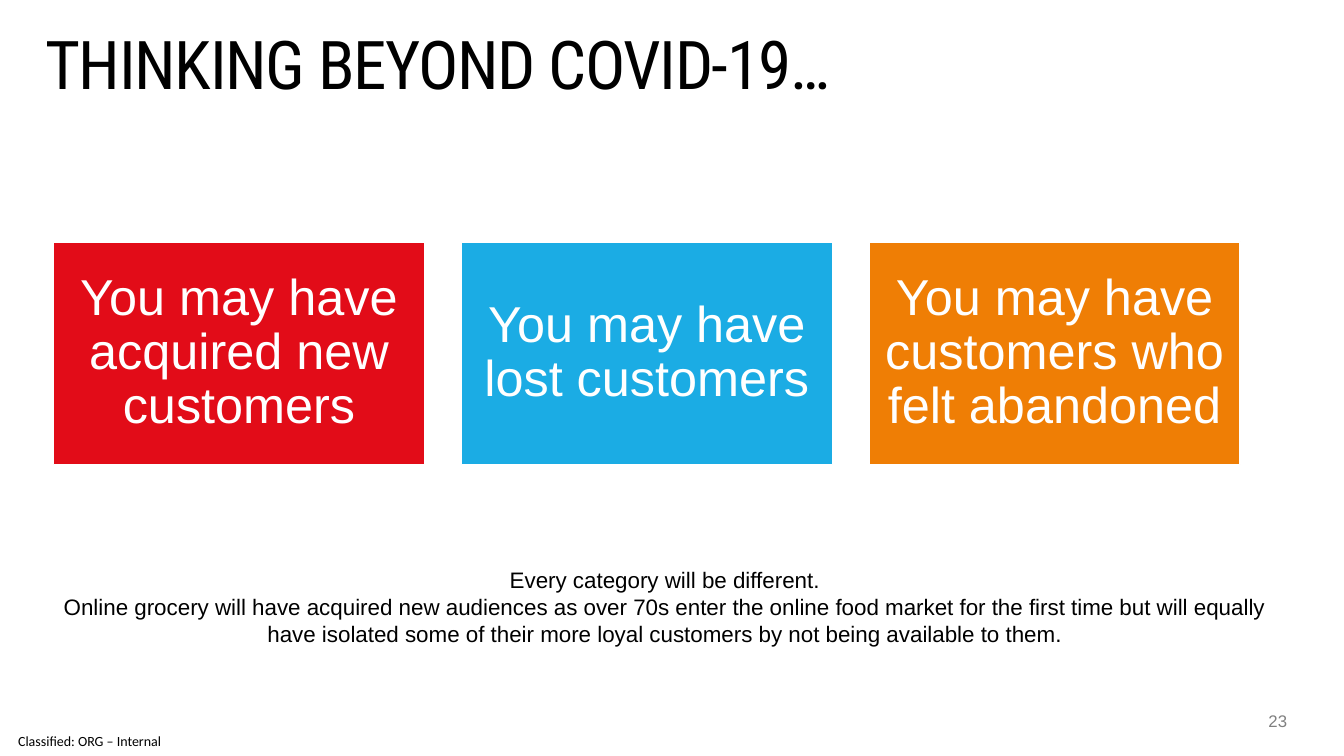
from pptx import Presentation
from pptx.dml.color import RGBColor
from pptx.enum.shapes import MSO_SHAPE
from pptx.enum.text import MSO_ANCHOR, PP_ALIGN
from pptx.util import Pt

# Content
TITLE = "THINKING BEYOND COVID-19…"
OUTCOMES = [
    ("You may have acquired new customers", "red"),
    ("You may have lost customers", "blue"),
    ("You may have customers who felt abandoned", "orange"),
]
COMMENTARY = [
    "Every category will be different.",
    "Online grocery will have acquired new audiences as over 70s enter the "
    "online food market for the first time but will equally have isolated "
    "some of their more loyal customers by not being available to them.",
]
CLASSIFICATION = "Classified: ORG – Internal"
PAGE_NUMBER = "23"

THEME = {
    "color": {"black": "000000", "white": "FFFFFF", "grey": "808080",
              "red": "E20C18", "blue": "1BACE4", "orange": "EF7E05"},
    "size": {"title": 48, "card": 36, "body": 16, "page": 12, "label": 10},
    "font": {"title": "Roboto Condensed", "card": "Arial", "body": "Arial",
             "page": "Arial", "label": "Calibri"},
}

# Layout
CARD_LEFT, CARD_TOP, CARD_WIDTH, CARD_HEIGHT = 38.2, 172.8, 265, 159
CARD_STEP = 291.3
CARD_INSET = 10.8


def color(name):
    return RGBColor.from_string(THEME["color"][name])


def write(shape, lines, role, ink="black", align=PP_ALIGN.LEFT,
          anchor=MSO_ANCHOR.TOP, inset=(0, 0), line_spacing=None):
    frame = shape.text_frame
    frame.word_wrap = True
    frame.vertical_anchor = anchor
    frame.margin_left = frame.margin_right = Pt(inset[0])
    frame.margin_top = frame.margin_bottom = Pt(inset[1])
    frame.text = "\n".join(lines)
    for paragraph in frame.paragraphs:
        paragraph.alignment = align
        paragraph.line_spacing = line_spacing
        paragraph.font.name = THEME["font"][role]
        paragraph.font.size = Pt(THEME["size"][role])
        paragraph.font.color.rgb = color(ink)
    return frame


def add_text(slide, box, lines, role, **style):
    return write(slide.shapes.add_textbox(*map(Pt, box)), lines, role, **style)


def add_card(slide, index, text, fill):
    card = slide.shapes.add_shape(
        MSO_SHAPE.RECTANGLE, Pt(CARD_LEFT + index * CARD_STEP), Pt(CARD_TOP),
        Pt(CARD_WIDTH), Pt(CARD_HEIGHT))
    card.shadow.inherit = False
    card.fill.solid()
    card.fill.fore_color.rgb = color(fill)
    card.line.color.rgb = color("white")
    card.line.width = Pt(1)
    write(card, [text], "card", ink="white", align=PP_ALIGN.CENTER,
          anchor=MSO_ANCHOR.MIDDLE, inset=(CARD_INSET, CARD_INSET),
          line_spacing=0.9)


def main():
    deck = Presentation()
    deck.slide_width, deck.slide_height = Pt(960), Pt(540)
    slide = deck.slides.add_slide(deck.slide_layouts[6])

    # Classification label
    add_text(slide, (0, 519, 128, 21), [CLASSIFICATION], "label",
             align=PP_ALIGN.CENTER, anchor=MSO_ANCHOR.MIDDLE)

    # Title, with letters set 1 pt tighter
    title = add_text(slide, (32.4, 29.5, 896, 45.4), [TITLE], "title",
                     line_spacing=Pt(44))
    title.paragraphs[0].runs[0].font._element.set("spc", "-100")

    # Page number
    add_text(slide, (885.6, 507.6, 33.8, 14.4), [PAGE_NUMBER], "page",
             ink="grey", align=PP_ALIGN.RIGHT)

    # Outcome cards
    for index, (text, fill) in enumerate(OUTCOMES):
        add_card(slide, index, text, fill)

    # Commentary
    add_text(slide, (21.6, 401, 906.5, 65.5), COMMENTARY, "body",
             align=PP_ALIGN.CENTER, inset=(7.2, 3.6))

    deck.save("out.pptx")


if __name__ == "__main__":
    main()
